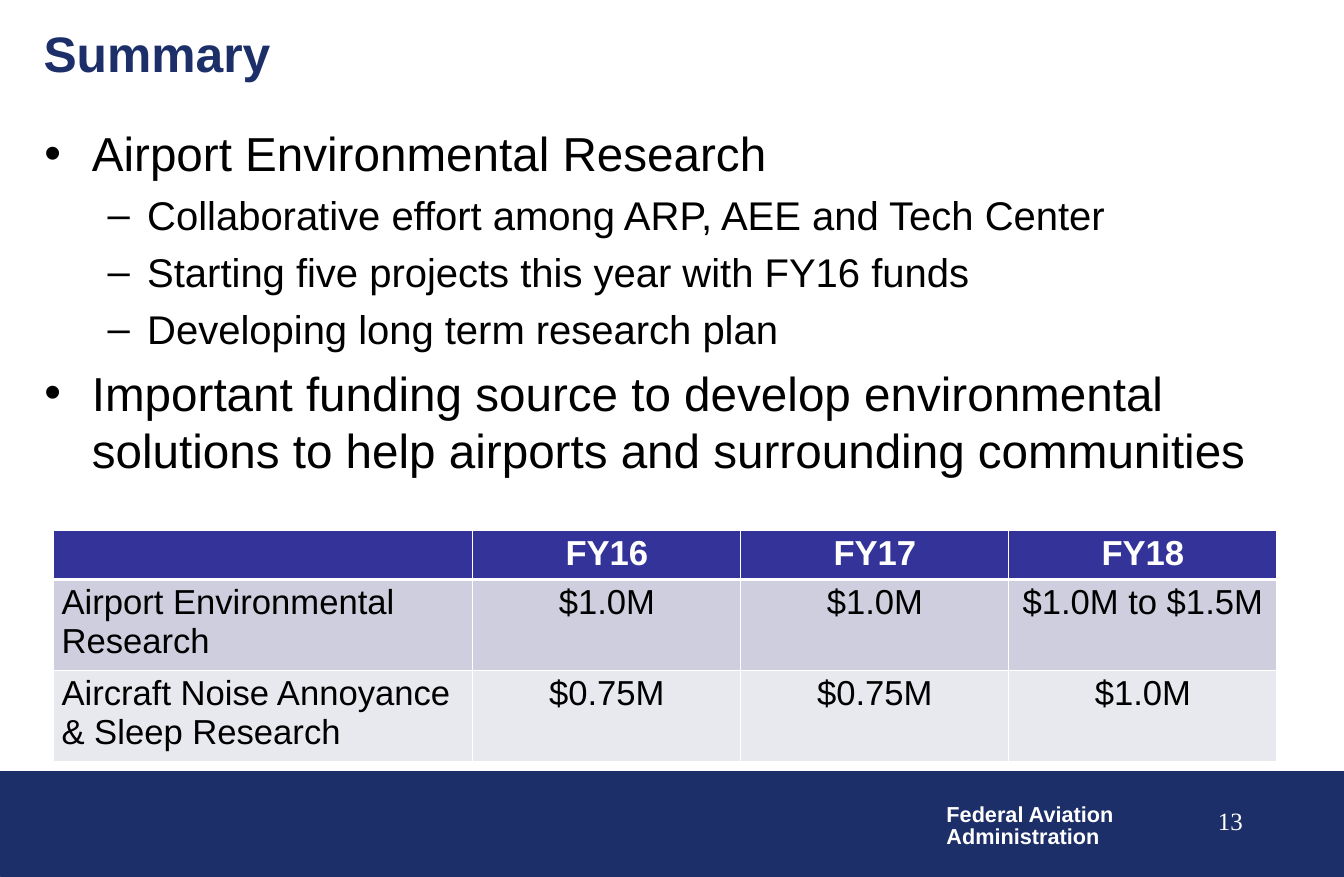
from pptx import Presentation
from pptx.dml.color import RGBColor
from pptx.enum.shapes import MSO_SHAPE
from pptx.enum.text import MSO_ANCHOR, PP_ALIGN
from pptx.oxml.ns import qn
from pptx.util import Inches, Pt
from lxml.etree import SubElement

NAVY = RGBColor(0x1D, 0x2F, 0x68)
INDIGO = RGBColor(0x33, 0x33, 0x99)
LILAC = RGBColor(0xCE, 0xCE, 0xDE)
PALE = RGBColor(0xE8, 0xE8, 0xEF)
WHITE = RGBColor(0xFF, 0xFF, 0xFF)
BLACK = RGBColor(0, 0, 0)

prs = Presentation()
prs.slide_width, prs.slide_height = Inches(17.25), Inches(11.25)
s = prs.slides.add_slide(prs.slide_layouts[6])


def write(p, text, size=32, color=BLACK, bold=False, font="Arial", align=PP_ALIGN.LEFT):
    p.alignment = align
    r = p.add_run()
    r.text = text
    r.font.name, r.font.size, r.font.bold = font, Pt(size), bold
    r.font.color.rgb = color


def add_box(x, y, w, h, inset_x=0.16, inset_y=0.08, wrap=True):
    tf = s.shapes.add_textbox(Inches(x), Inches(y), Inches(w), Inches(h)).text_frame
    tf.word_wrap = wrap
    tf.margin_left = tf.margin_right = Inches(inset_x)
    tf.margin_top = tf.margin_bottom = Inches(inset_y)
    return tf


# Footer band
band = s.shapes.add_shape(MSO_SHAPE.RECTANGLE, 0, Inches(9.9), prs.slide_width, Inches(1.34))
band.shadow.inherit = False
band.fill.solid()
band.fill.fore_color.rgb = NAVY
band.line.color.rgb = NAVY
band.line.width = Pt(0.75)

# Agency name and page number
tf = add_box(12.05, 10.28, 2.36, 0.67, 0.1, 0.05, wrap=False)
for i, line in enumerate(["Federal Aviation", "Administration"]):
    p = tf.add_paragraph() if i else tf.paragraphs[0]
    p.line_spacing = 0.85
    write(p, line, size=20, color=WHITE, bold=True)
tf = add_box(12.52, 10.25, 3.59, 0.75)
write(tf.paragraphs[0], "13", size=23, color=WHITE, font="Times New Roman", align=PP_ALIGN.RIGHT)

# Title
tf = add_box(0.4, 0.17, 16.64, 1)
tf.vertical_anchor = MSO_ANCHOR.MIDDLE
write(tf.paragraphs[0], "Summary", size=46, color=NAVY, bold=True)

# Bullets: (level, text), with bullet, margin, hanging indent, size and gap per level
LEVELS = [("•", 0.61, 0.61, 44, 10), ("–", 1.32, 0.51, 37, 8.5)]
points = [
    (0, "Airport Environmental Research"),
    (1, "Collaborative effort among ARP, AEE and Tech Center"),
    (1, "Starting five projects this year with FY16 funds"),
    (1, "Developing long term research plan"),
    (0, "Important funding source to develop environmental solutions "
        "to help airports and surrounding communities"),
]
tf = add_box(0.41, 1.51, 16.25, 5.11)
for i, (level, text) in enumerate(points):
    bullet, margin, hang, size, gap = LEVELS[level]
    p = tf.add_paragraph() if i else tf.paragraphs[0]
    p.level = level
    if i:
        p.space_before = Pt(gap)
    pPr = p._p.get_or_add_pPr()
    pPr.set("marL", str(Inches(margin)))
    pPr.set("indent", str(-Inches(hang)))
    SubElement(pPr, qn("a:buFont"), typeface="Arial")
    SubElement(pPr, qn("a:buChar"), char=bullet)
    write(p, text, size=size)

# Funding table
rows = [
    ["", "FY16", "FY17", "FY18"],
    ["Airport Environmental Research", "$1.0M", "$1.0M", "$1.0M to $1.5M"],
    ["Aircraft Noise Annoyance & Sleep Research", "$0.75M", "$0.75M", "$1.0M"],
]
table = s.shapes.add_table(3, 4, Inches(0.69), Inches(6.8), Inches(15.7), Inches(2.79)).table
for col, width in zip(table.columns, [5.38, 3.44, 3.44, 3.44]):
    col.width = Inches(width)
for row, height in zip(table.rows, [0.59, 1.1, 1.1]):
    row.height = Inches(height)
for i, row in enumerate(rows):
    for j, text in enumerate(row):
        cell = table.cell(i, j)
        if text:
            write(cell.text_frame.paragraphs[0], text, bold=i == 0,
                  color=BLACK if i else WHITE,
                  align=PP_ALIGN.CENTER if j else PP_ALIGN.LEFT)
        # White borders, thicker between the header and the body
        tcPr = cell._tc.get_or_add_tcPr()
        for side in "LRTB":
            thick = (i, side) in [(0, "B"), (1, "T")]
            ln = SubElement(tcPr, qn("a:ln" + side), w=str(Pt(3 if thick else 1)))
            SubElement(SubElement(ln, qn("a:solidFill")), qn("a:srgbClr"), val=str(WHITE))
        cell.fill.solid()
        cell.fill.fore_color.rgb = [INDIGO, LILAC, PALE][i]

prs.save("out.pptx")
